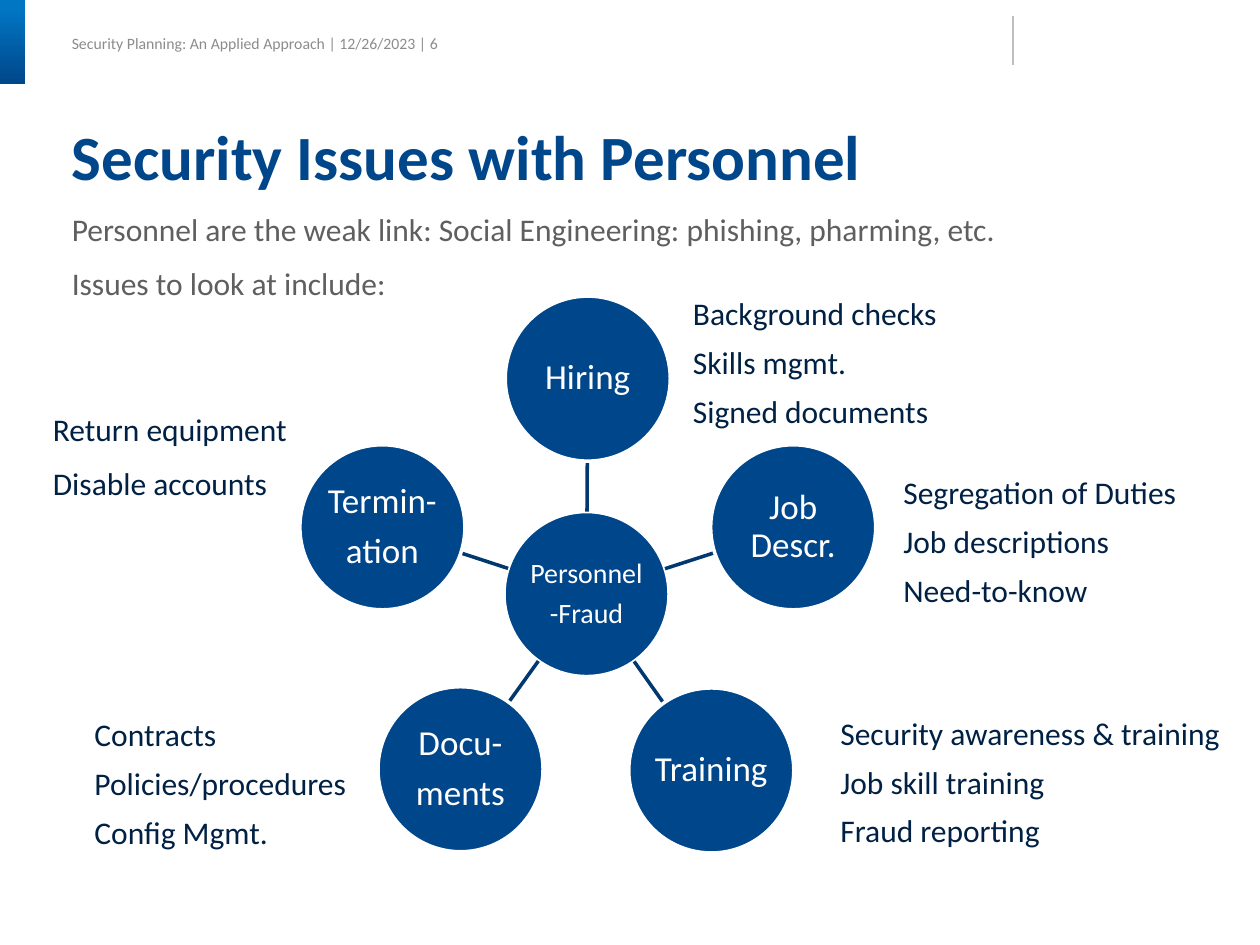
from dataclasses import dataclass
from math import hypot
from typing import Optional

from lxml import etree
from pptx import Presentation
from pptx.dml.color import RGBColor
from pptx.enum.shapes import MSO_CONNECTOR, MSO_SHAPE
from pptx.enum.text import MSO_ANCHOR, PP_ALIGN
from pptx.oxml.ns import qn
from pptx.util import Inches, Pt

OVAL, ROUNDED = MSO_SHAPE.OVAL, MSO_SHAPE.ROUNDED_RECTANGLE
STRAIGHT = MSO_CONNECTOR.STRAIGHT
TOP, MIDDLE = MSO_ANCHOR.TOP, MSO_ANCHOR.MIDDLE
LEFT, CENTER = PP_ALIGN.LEFT, PP_ALIGN.CENTER


@dataclass(frozen=True)
class Theme:
    font: str = "Calibri"
    navy: str = "00468A"
    sky: str = "0176C3"
    spoke: str = "00386F"
    note: str = "002143"
    body: str = "5F5F5F"
    header: str = "8C8C8C"
    rule: str = "BFBFBF"
    white: str = "FFFFFF"
    header_size: float = 9
    title_size: float = 36
    text_size: float = 18
    hub_size: float = 16
    node_size: float = 20


THEME = Theme()
DIAMETER = 1.31


@dataclass(frozen=True)
class TextStyle:
    size: float
    color: str
    bold: bool = False
    align: PP_ALIGN = LEFT
    anchor: MSO_ANCHOR = TOP
    line_spacing: Optional[float] = None
    gap: float = 0
    margin: float = 0


@dataclass(frozen=True)
class TextBlock:
    left: float
    top: float
    width: float
    height: float
    lines: tuple
    style: TextStyle


@dataclass(frozen=True)
class Circle:
    left: float
    top: float
    lines: tuple
    size: float = THEME.node_size

    @property
    def center(self) -> tuple:
        return self.left + DIAMETER / 2, self.top + DIAMETER / 2


HEADER = TextStyle(THEME.header_size, THEME.header, anchor=MIDDLE)
TITLE = TextStyle(THEME.title_size, THEME.navy, bold=True, line_spacing=0.9)
BODY = TextStyle(THEME.text_size, THEME.body, line_spacing=Pt(22), gap=9)
NOTE = TextStyle(THEME.text_size, THEME.note, line_spacing=Pt(22), gap=6)
LOOSE_NOTE = TextStyle(THEME.text_size, THEME.note, line_spacing=Pt(22), gap=9)
PLAIN_NOTE = TextStyle(THEME.text_size, THEME.note, gap=6)

HEADINGS = [
    TextBlock(0.57, 0.23, 3.2, 0.23,
              ("Security Planning: An Applied Approach | 12/26/2023 | 6",), HEADER),
    TextBlock(0.57, 1.66, 8.9, 0.51,
              ("Personnel are the weak link: Social Engineering: phishing, pharming, etc.",
               "Issues to look at include:"), BODY),
    TextBlock(0.57, 1, 8.92, 0.55, ("Security Issues with Personnel",), TITLE),
]
NOTES = [
    TextBlock(5.5, 2.33, 2.1, 1,
              ("Background checks", "Skills mgmt.", "Signed documents"), NOTE),
    TextBlock(7.17, 3.75, 2.4, 1,
              ("Segregation of Duties", "Job descriptions", "Need-to-know"), NOTE),
    TextBlock(0.75, 5.67, 2.2, 1,
              ("Contracts", "Policies/procedures", "Config Mgmt."), NOTE),
    TextBlock(6.67, 5.67, 3.2, 1,
              ("Security awareness & training", "Job skill training", "Fraud reporting"),
              PLAIN_NOTE),
    TextBlock(0.42, 3.25, 2, 1, ("Return equipment", "Disable accounts"), LOOSE_NOTE),
]
HUB = Circle(4, 4.06, ("Personnel", "-Fraud"), THEME.hub_size)
NODES = [
    Circle(4.01, 2.35, ("Hiring",)),
    Circle(5.64, 3.53, ("Job Descr.",)),
    Circle(4.99, 5.46, ("Training",)),
    Circle(3, 5.45, ("Docu-", "ments")),
    Circle(2.38, 3.53, ("Termin-", "ation")),
]


def rgb(value: str) -> RGBColor:
    return RGBColor.from_string(value)


def set_attributes(target, values: dict) -> None:
    for name, value in values.items():
        setattr(target, name, value)


def write_text(frame, lines: tuple, style: TextStyle) -> None:
    margins = ("margin_left", "margin_right", "margin_top", "margin_bottom")
    set_attributes(frame, dict.fromkeys(margins, Inches(style.margin)))
    set_attributes(frame, {"word_wrap": True, "vertical_anchor": style.anchor})
    for index, line in enumerate(lines):
        para = frame.add_paragraph() if index else frame.paragraphs[0]
        set_attributes(para, {
            "alignment": style.align, "line_spacing": style.line_spacing,
            "space_before": Pt(style.gap if index else 0),
        })
        span = para.add_run()
        span.text = line
        set_attributes(span.font, {
            "name": THEME.font, "size": Pt(style.size), "bold": style.bold,
        })
        span.font.color.rgb = rgb(style.color)


def add_text(page, block: TextBlock) -> None:
    box = page.shapes.add_textbox(Inches(block.left), Inches(block.top),
                                  Inches(block.width), Inches(block.height))
    write_text(box.text_frame, block.lines, block.style)


def add_line(page, start: tuple, end: tuple, color: str, width: float) -> None:
    line = page.shapes.add_connector(STRAIGHT, *(Inches(value) for value in start + end))
    line.line.color.rgb = rgb(color)
    line.line.width = Pt(width)
    etree.SubElement(line._element.spPr, qn("a:effectLst"))


def add_circle(page, circle: Circle) -> None:
    shape = page.shapes.add_shape(OVAL, Inches(circle.left), Inches(circle.top),
                                  Inches(DIAMETER), Inches(DIAMETER))
    shape.shadow.inherit = False
    shape.fill.solid()
    shape.fill.fore_color.rgb = rgb(THEME.navy)
    shape.line.color.rgb = rgb(THEME.white)
    shape.line.width = Pt(2)
    style = TextStyle(circle.size, THEME.white, align=CENTER, anchor=MIDDLE,
                      line_spacing=0.9, gap=0.35 * circle.size, margin=0.01)
    write_text(shape.text_frame, circle.lines, style)


def add_spoke(page, hub: Circle, node: Circle) -> None:
    """Join the facing edges of two circles along the line of their centres."""
    (x1, y1), (x2, y2) = hub.center, node.center
    share = DIAMETER / 2 / hypot(x2 - x1, y2 - y1)
    dx, dy = (x2 - x1) * share, (y2 - y1) * share
    add_line(page, (x1 + dx, y1 + dy), (x2 - dx, y2 - dy), THEME.spoke, 2)


def add_corner_bar(page) -> None:
    bar = page.shapes.add_shape(ROUNDED, 0, 0, Inches(0.2), Inches(0.67))
    bar.adjustments[0] = 0
    bar.shadow.inherit = False
    bar.line.fill.background()
    bar.fill.gradient()
    bar.fill.gradient_angle = 270
    for stop, position, color in zip(bar.fill.gradient_stops, (0.1, 1),
                                     (THEME.sky, THEME.navy)):
        stop.position = position
        stop.color.rgb = rgb(color)


def main() -> None:
    deck = Presentation()
    deck.slide_width, deck.slide_height = Inches(10), Inches(7.5)
    page = deck.slides.add_slide(deck.slide_layouts[6])
    add_corner_bar(page)
    add_line(page, (8.04, 0.13), (8.04, 0.52), THEME.rule, 0.75)
    for block in HEADINGS:
        add_text(page, block)
    add_circle(page, HUB)
    for node in NODES:
        add_spoke(page, HUB, node)
        add_circle(page, node)
    for block in NOTES:
        add_text(page, block)
    deck.save("out.pptx")


if __name__ == "__main__":
    main()
